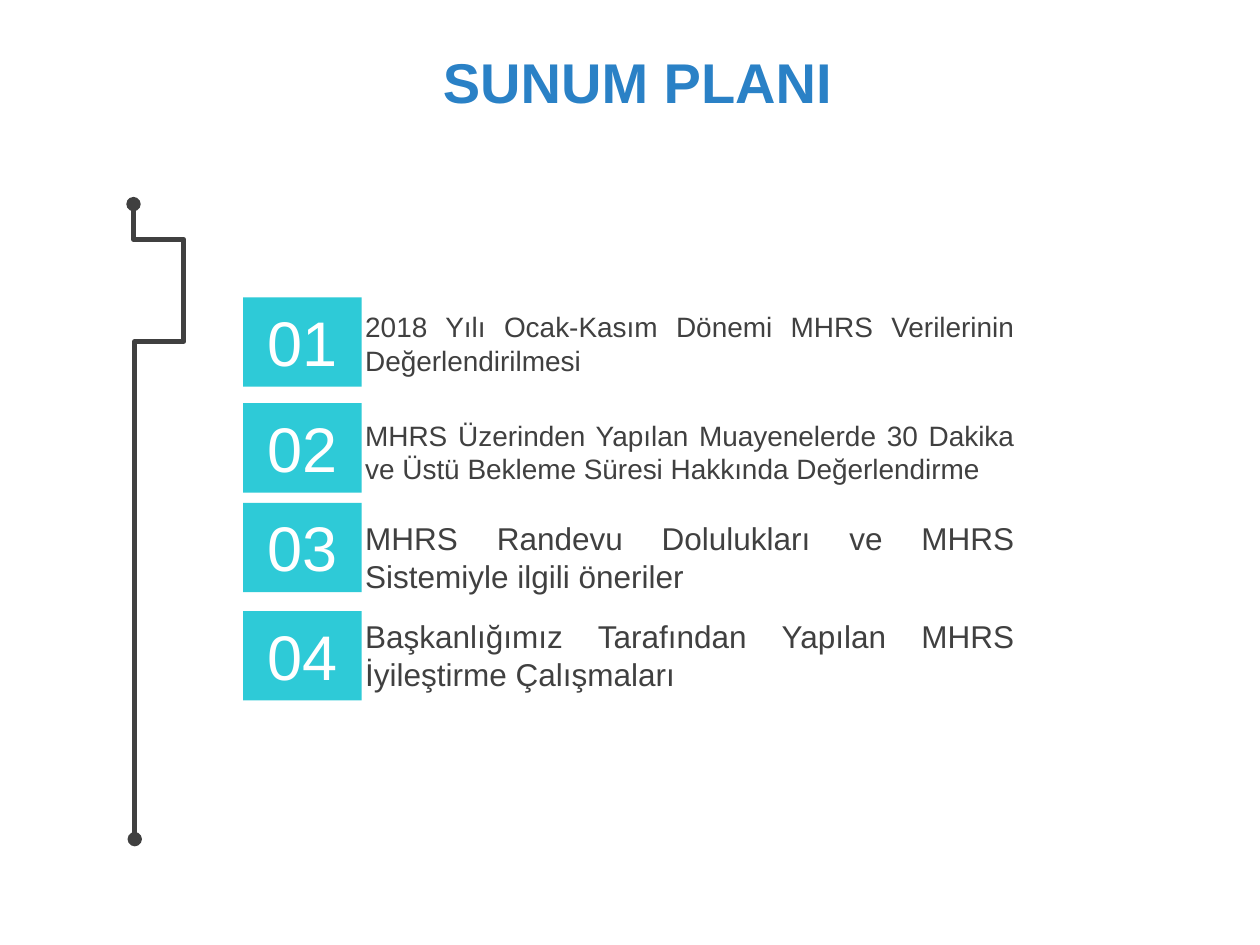
from dataclasses import dataclass

from lxml.etree import SubElement
from pptx import Presentation
from pptx.dml.color import RGBColor
from pptx.enum.shapes import MSO_SHAPE
from pptx.enum.text import MSO_ANCHOR, MSO_AUTO_SIZE, PP_ALIGN
from pptx.oxml.ns import qn
from pptx.util import Inches, Pt


@dataclass(frozen=True)
class Theme:
    """Colours, type sizes and font of the deck."""

    font: str = "Arial"
    title: str = "2A81C6"
    tile: str = "2ECAD7"
    number: str = "FFFFFF"
    ink: str = "404040"
    title_size: int = 32
    number_size: int = 36
    topic_size: int = 16
    large_topic_size: int = 18
    line_width: float = 2.75


class AgendaSlide:
    """A title-only slide with methods for its agenda elements."""

    def __init__(self, deck, theme):
        self.theme = theme
        self.page = deck.slides.add_slide(deck.slide_layouts[5])

    def set_text(self, shape, text, size, color, align, bold=False):
        """Fill a shape with one formatted paragraph."""
        frame = shape.text_frame
        frame.text = text
        frame.word_wrap = True
        para = frame.paragraphs[0]
        para.alignment = align
        font = para.runs[0].font
        font.name, font.size, font.bold = self.theme.font, Pt(size), bold
        font.color.rgb = RGBColor.from_string(color)
        return frame

    def title(self, text, left, top, width, height):
        """Place and format the title placeholder."""
        box = self.page.shapes.title
        box.left, box.top = Inches(left), Inches(top)
        box.width, box.height = Inches(width), Inches(height)
        frame = self.set_text(box, text, self.theme.title_size, self.theme.title,
                              PP_ALIGN.CENTER, bold=True)
        frame.vertical_anchor = MSO_ANCHOR.MIDDLE

    def tile(self, text, left, top, width, height):
        """Add a numbered tile."""
        box = self.page.shapes.add_shape(
            MSO_SHAPE.RECTANGLE, Inches(left), Inches(top), Inches(width), Inches(height))
        box.shadow.inherit = False
        box.fill.solid()
        box.fill.fore_color.rgb = RGBColor.from_string(self.theme.tile)
        box.line.fill.background()
        frame = self.set_text(box, text, self.theme.number_size, self.theme.number,
                              PP_ALIGN.CENTER)
        frame.vertical_anchor = MSO_ANCHOR.TOP

    def topic(self, text, size, left, top, width, height):
        """Add a justified topic text."""
        box = self.page.shapes.add_textbox(
            Inches(left), Inches(top), Inches(width), Inches(height))
        frame = self.set_text(box, text, size, self.theme.ink, PP_ALIGN.JUSTIFY)
        frame.auto_size = MSO_AUTO_SIZE.SHAPE_TO_FIT_TEXT

    def track(self, points):
        """Add an open line with a dot at each end."""
        start, *rest = [(Inches(x), Inches(y)) for x, y in points]
        builder = self.page.shapes.build_freeform(*start)
        builder.add_line_segments(rest, close=False)
        track = builder.convert_to_shape()
        track.shadow.inherit = False
        track.fill.background()
        track.line.color.rgb = RGBColor.from_string(self.theme.ink)
        track.line.width = Pt(self.theme.line_width)
        outline = track.element.spPr.find(qn("a:ln"))
        SubElement(outline, qn("a:round"))
        for end in ("a:headEnd", "a:tailEnd"):
            SubElement(outline, qn(end), type="oval")


TOPICS = [
    ("2018 Yılı Ocak-Kasım Dönemi MHRS Verilerinin Değerlendirilmesi",
     Theme.topic_size, 2.36, 2.41, 0.64),
    ("MHRS Üzerinden Yapılan Muayenelerde 30 Dakika ve Üstü Bekleme Süresi "
     "Hakkında Değerlendirme", Theme.topic_size, 3.2, 3.27, 0.64),
    ("MHRS Randevu Dolulukları ve MHRS Sistemiyle ilgili öneriler",
     Theme.large_topic_size, 3.99, 4.07, 0.71),
    ("Başkanlığımız Tarafından Yapılan MHRS İyileştirme Çalışmaları",
     Theme.large_topic_size, 4.85, 4.85, 0.71),
]
TRACK = [(1.06, 1.62), (1.06, 1.9), (1.46, 1.9), (1.46, 2.71), (1.07, 2.71), (1.07, 6.66)]


def main():
    """Build and save the agenda slide."""
    deck = Presentation()
    deck.slide_width, deck.slide_height = Inches(10), Inches(7.5)
    agenda = AgendaSlide(deck, Theme())
    agenda.title("SUNUM PLANI", 0.12, 0, 9.88, 1.29)
    for number, (text, size, tile_top, text_top, height) in enumerate(TOPICS, start=1):
        agenda.tile(f"{number:02}", 1.93, tile_top, 0.94, 0.71)
        agenda.topic(text, size, 2.8, text_top, 5.35, height)
    agenda.track(TRACK)
    deck.save("out.pptx")


if __name__ == "__main__":
    main()
